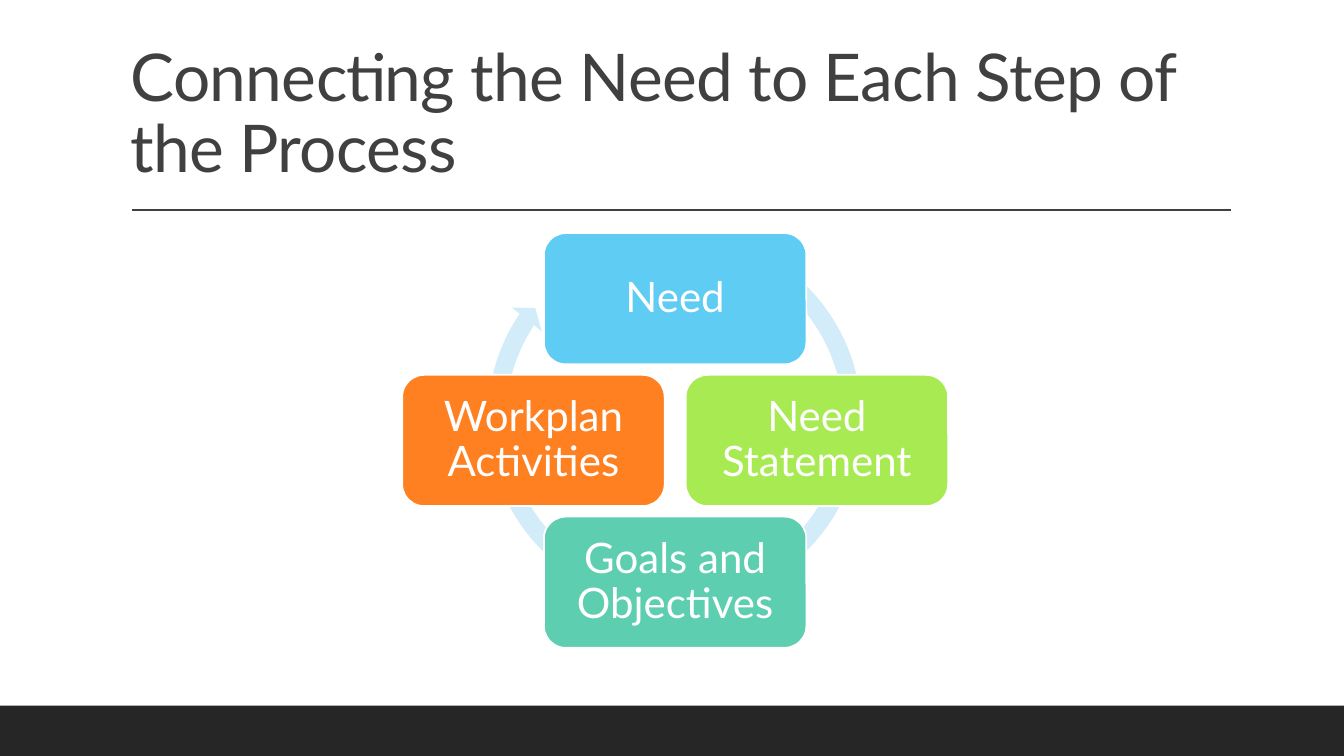
import pptx
import pptx.dml.color
import pptx.enum.shapes
import pptx.enum.text
import pptx.oxml.ns
import pptx.util
from lxml import etree

EMU_PER_PX = 9525
SHAPES = pptx.enum.shapes.MSO_SHAPE
ALIGN = pptx.enum.text.PP_ALIGN
ANCHOR = pptx.enum.text.MSO_ANCHOR

COLOURS = {
    "ink": "404040",
    "footer": "262626",
    "white": "FFFFFF",
    "ring": "D2ECFA",
    "need": "5ECCF3",
    "statement": "A7EA52",
    "goals": "5DCEAF",
    "workplan": "FF8021",
}

CYCLE_CENTRE = (643, 419)
CYCLE_RADIUS = 135
STEP_SIZE = (250, 125)
# wording, colour, horizontal and vertical direction from the cycle's centre
STEPS = [
    ("Need", "need", 0, -1),
    ("Need Statement", "statement", 1, 0),
    ("Goals and Objectives", "goals", 0, 1),
    ("Workplan Activities", "workplan", -1, 0),
]
RING_ADJUSTMENTS = (0.04668, 2.729, 128.288, 180.326, 0.04847)

TITLE_FORMAT = {
    "frame": {"word_wrap": True, "vertical_anchor": ANCHOR.BOTTOM},
    "paragraph": {"alignment": ALIGN.LEFT, "line_spacing": 0.9},
    "font": {"name": "Lato", "size": pptx.util.Pt(47)},
}
STEP_MARGIN = 12 * EMU_PER_PX
STEP_FORMAT = {
    "frame": {
        "word_wrap": True,
        "vertical_anchor": ANCHOR.MIDDLE,
        "margin_left": STEP_MARGIN,
        "margin_right": STEP_MARGIN,
        "margin_top": STEP_MARGIN,
        "margin_bottom": STEP_MARGIN,
    },
    "paragraph": {"alignment": ALIGN.CENTER, "line_spacing": 0.9},
    "font": {"name": "Lato", "size": pptx.util.Pt(30)},
}


def emu(*lengths):
    return [pptx.util.Emu(length * EMU_PER_PX) for length in lengths]


def rgb(colour):
    return pptx.dml.color.RGBColor.from_string(COLOURS[colour])


def write(shape, text, colour, text_format):
    frame = shape.text_frame
    paragraph = frame.paragraphs[0]
    run = paragraph.add_run()
    run.text = text
    run.font.color.rgb = rgb(colour)
    parts = {"frame": frame, "paragraph": paragraph, "font": run.font}
    for part, values in text_format.items():
        for attribute, value in values.items():
            setattr(parts[part], attribute, value)
    return run


def add_filled(slide, preset, box, fill, outline=None):
    shape = slide.shapes.add_shape(preset, *emu(*box))
    shape.shadow.inherit = False
    shape.fill.solid()
    shape.fill.fore_color.rgb = rgb(fill)
    if outline:
        shape.line.color.rgb = rgb(outline)
        shape.line.width = pptx.util.Pt(1.25)
    else:
        shape.line.fill.background()
    return shape


def add_title(slide, text):
    title = slide.shapes.add_textbox(*emu(115, 30, 1056, 153))
    run = write(title, text, "ink", TITLE_FORMAT)
    run.font._element.set("spc", "-50")


def add_rule(slide, left, right, y):
    rule = slide.shapes.add_connector(
        pptx.enum.shapes.MSO_CONNECTOR.STRAIGHT, *emu(left, y, right, y))
    rule.line.color.rgb = rgb("ink")
    rule.line.width = pptx.util.Pt(1)
    etree.SubElement(rule._element.spPr, pptx.oxml.ns.qn("a:effectLst"))


def add_ring(slide):
    """Draw the circular arrow that runs behind the steps."""
    ring = add_filled(slide, SHAPES.CIRCULAR_ARROW, (455, 211, 375, 375), "ring")
    for index, value in enumerate(RING_ADJUSTMENTS):
        ring.adjustments[index] = value


def add_step(slide, text, colour, across, down):
    width, height = STEP_SIZE
    left = CYCLE_CENTRE[0] + across * CYCLE_RADIUS - width // 2
    top = CYCLE_CENTRE[1] + down * CYCLE_RADIUS - height // 2
    step = add_filled(slide, SHAPES.ROUNDED_RECTANGLE,
                      (left, top, width, height), colour, "white")
    write(step, text, "white", STEP_FORMAT)


def main():
    deck = pptx.Presentation()
    deck.slide_width, deck.slide_height = emu(1280, 720)
    slide = deck.slides.add_slide(deck.slide_layouts[6])
    add_filled(slide, SHAPES.RECTANGLE, (0, 672, 1280, 48), "footer")
    add_rule(slide, 126, 1172, 200)
    add_title(slide, "Connecting the Need to Each Step of the Process")
    add_ring(slide)
    for step in STEPS:
        add_step(slide, *step)
    deck.save("out.pptx")


if __name__ == "__main__":
    main()
